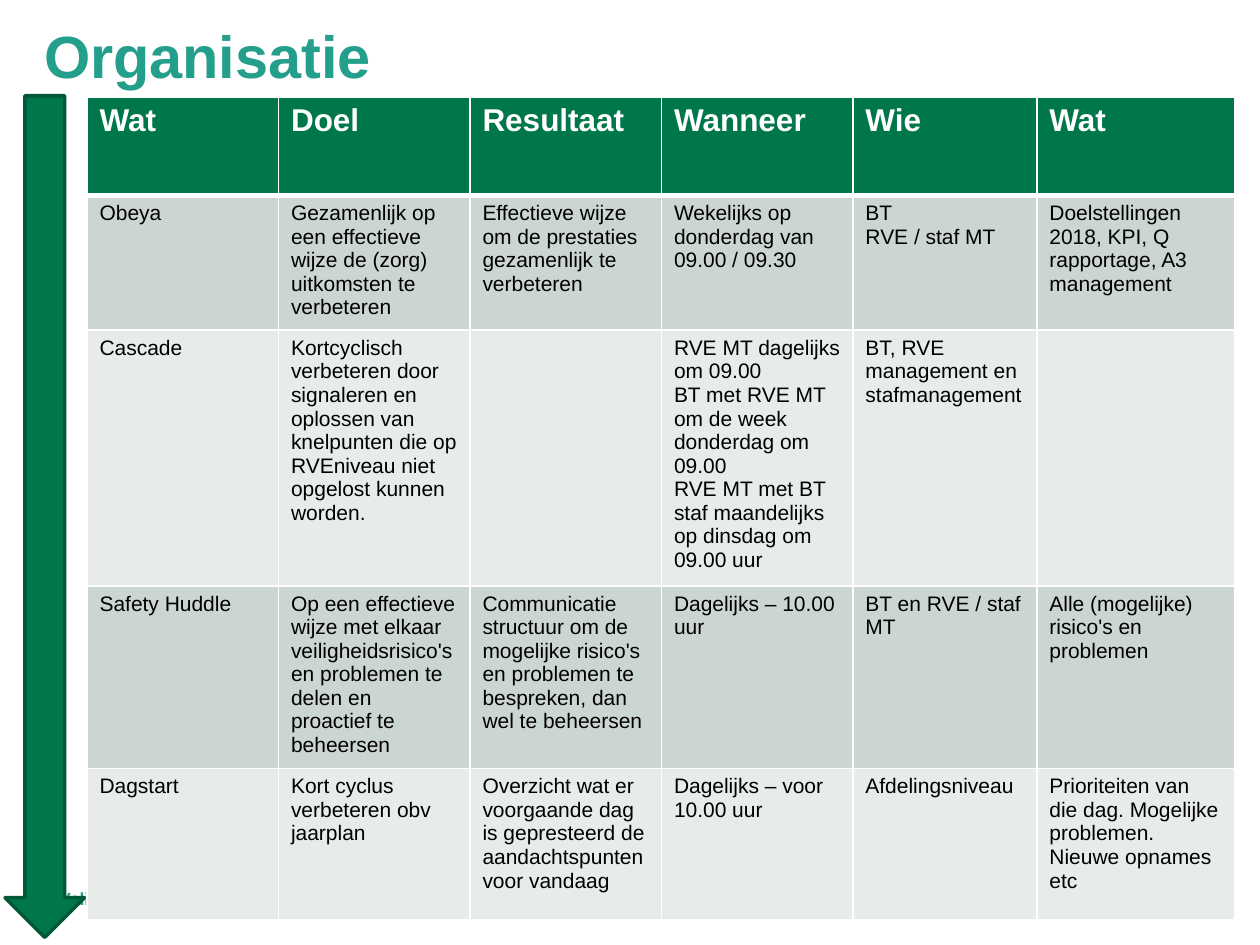
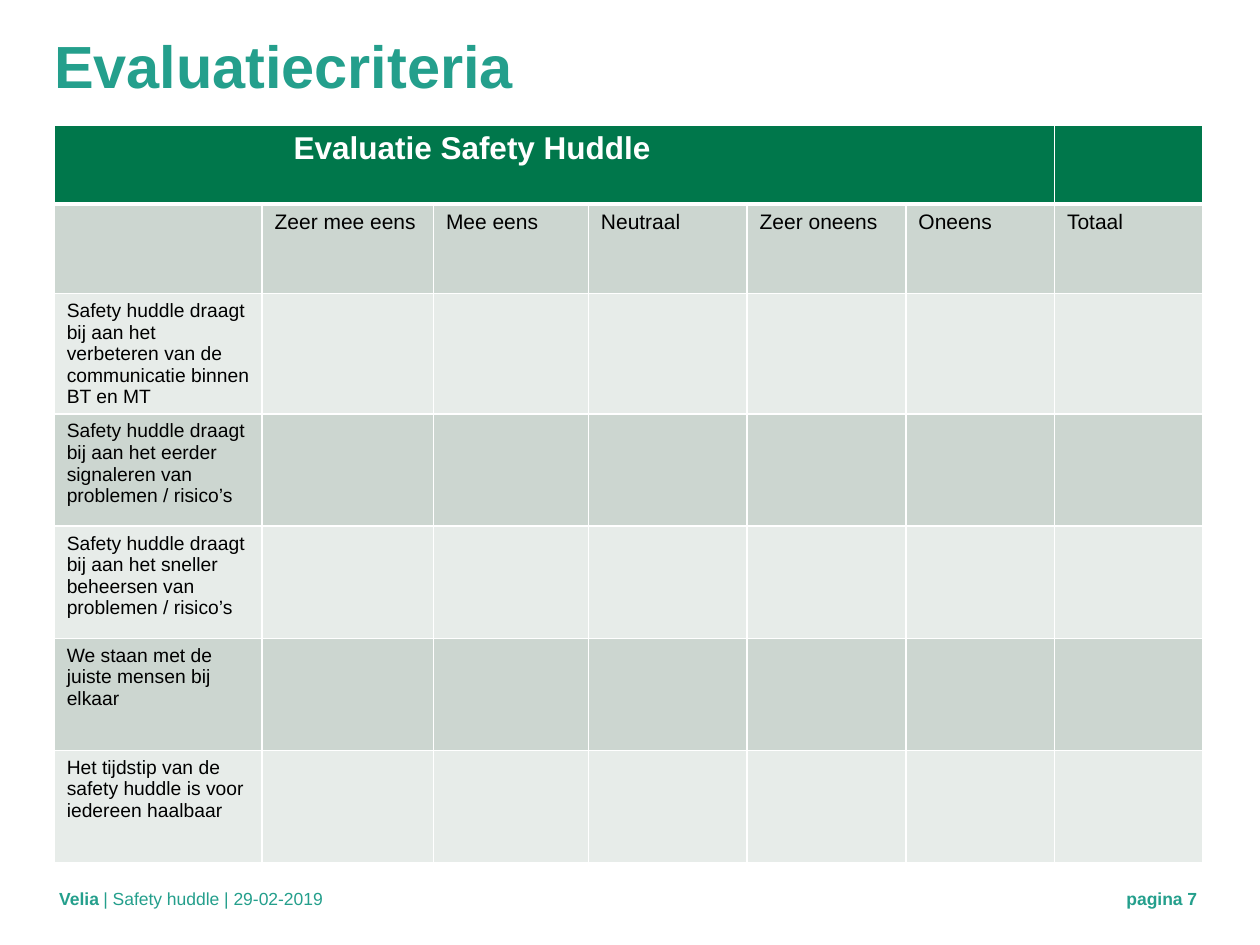
from pptx import Presentation
from pptx.dml.color import RGBColor
from pptx.enum.shapes import MSO_SHAPE
from pptx.enum.text import MSO_ANCHOR
from pptx.oxml.ns import qn
from pptx.util import Inches, Pt
from lxml.etree import SubElement

TEAL, GREEN, DARK_GREEN = "249F8C", "00774B", "005837"
BANDS = ("CCD6D0", "E7ECE9")
WHITE, BLACK = "FFFFFF", "000000"

TITLE = {"size": Pt(34), "bold": True, "color": TEAL}
FOOTER = {"size": Pt(10), "bold": False, "color": TEAL}
FOOTER_BOLD = {**FOOTER, "bold": True}
HEADER = {"size": Pt(18), "bold": True, "color": WHITE}
BODY = {"size": Pt(12), "bold": False, "color": BLACK}
SMALL = {**BODY, "size": Pt(11)}
CELL_LINE_SPACING = 1.12


def rgb(value):
    return RGBColor.from_string(value)


def format_paragraph(paragraph, style, spacing):
    paragraph.line_spacing = Pt(spacing)
    for run in paragraph.runs:
        font = run.font
        font.name = "Arial"
        for name, value in style.items():
            if name == "color":
                font.color.rgb = rgb(value)
            else:
                setattr(font, name, value)


class Deck:
    def __init__(self):
        self.presentation = Presentation()
        self.presentation.slide_width = Inches(10)
        self.presentation.slide_height = Inches(7.5)
        self.slide = None

    def new_slide(self):
        self.slide = self.presentation.slides.add_slide(self.presentation.slide_layouts[6])
        self.footer("Velia", 0.47, 0.35, FOOTER_BOLD, wrap=False)

    def text(self, text, left, top, width, height, style, spacing, wrap=True):
        box = self.slide.shapes.add_textbox(*map(Inches, (left, top, width, height)))
        frame = box.text_frame
        frame.text = text
        settings = {"word_wrap": wrap, "vertical_anchor": MSO_ANCHOR.MIDDLE,
                    "margin_left": 0, "margin_top": 0,
                    "margin_right": 0, "margin_bottom": 0}
        for name, value in settings.items():
            setattr(frame, name, value)
        format_paragraph(frame.paragraphs[0], style, spacing)

    def title(self, text, left, top):
        self.text(text, left, top, 9.06, 0.59, TITLE, 42.5)

    def footer(self, text, left, width, style, wrap=True):
        self.text(text, left, 7.05, width, 0.17, style, 12, wrap)

    def down_arrow(self, left, top, width, height):
        shape = self.slide.shapes.add_shape(
            MSO_SHAPE.DOWN_ARROW, *map(Inches, (left, top, width, height)))
        shape.shadow.inherit = False
        shape.fill.solid()
        shape.fill.fore_color.rgb = rgb(GREEN)
        shape.line.color.rgb = rgb(DARK_GREEN)
        shape.line.width = Pt(2)

    def borders(self, cell, row):
        properties = cell._tc.get_or_add_tcPr()
        widths = {"lnL": 1, "lnR": 1, "lnT": 3 if row == 1 else 1, "lnB": 3 if row == 0 else 1}
        for side, width in widths.items():
            line = SubElement(properties, qn(f"a:{side}"), w=str(Pt(width)))
            fill = SubElement(line, qn("a:solidFill"))
            SubElement(fill, qn("a:srgbClr"), val=WHITE)

    def table(self, left, top, widths, heights, rows, styles):
        frame = self.slide.shapes.add_table(
            len(heights), len(widths), Inches(left), Inches(top),
            Inches(sum(widths)), Inches(sum(heights)))
        table = frame.table
        for column, width in zip(table.columns, widths):
            column.width = Inches(width)
        for row, height in zip(table.rows, heights):
            row.height = Inches(height)
        for row, style in enumerate(styles):
            # Fixed line spacing keeps the rows at their set heights
            spacing = style["size"].pt * CELL_LINE_SPACING
            for column in range(len(widths)):
                cell = table.cell(row, column)
                self.borders(cell, row)
                cell.fill.solid()
                cell.fill.fore_color.rgb = rgb(BANDS[(row - 1) % 2] if row else GREEN)
                # Short rows leave their remaining cells empty
                if column < len(rows[row]) and rows[row][column]:
                    cell.text_frame.text = rows[row][column]
                    for paragraph in cell.text_frame.paragraphs:
                        format_paragraph(paragraph, style, spacing)
        return table


def organisation_slide(deck):
    deck.new_slide()
    deck.title("Organisatie", 0.35, 0.13)
    deck.down_arrow(0.04, 0.76, 0.63, 6.68)
    rows = [
        ["Wat", "Doel", "Resultaat", "Wanneer", "Wie", "Wat"],
        ["Obeya",
         "Gezamenlijk op een effectieve wijze de (zorg) uitkomsten te verbeteren",
         "Effectieve wijze om de prestaties gezamenlijk te verbeteren",
         "Wekelijks op donderdag van 09.00 / 09.30",
         "BT\nRVE / staf MT",
         "Doelstellingen 2018, KPI, Q rapportage, A3 management"],
        ["Cascade",
         "Kortcyclisch verbeteren door signaleren en oplossen van knelpunten "
         "die op RVEniveau niet opgelost kunnen worden.",
         "",
         "RVE MT dagelijks om 09.00\n"
         "BT met RVE MT om de week donderdag om 09.00\n"
         "RVE MT met BT staf maandelijks op dinsdag om 09.00 uur",
         "BT, RVE management en stafmanagement"],
        ["Safety Huddle",
         "Op een effectieve wijze met elkaar veiligheidsrisico's en problemen "
         "te delen en proactief te beheersen",
         "Communicatie structuur om de mogelijke risico's en problemen "
         "te bespreken, dan wel te beheersen",
         "Dagelijks – 10.00 uur",
         "BT en RVE / staf MT",
         "Alle (mogelijke) risico's en problemen"],
        ["Dagstart",
         "Kort cyclus verbeteren obv jaarplan",
         "Overzicht wat er voorgaande dag is gepresteerd de aandachtspunten voor vandaag",
         "Dagelijks – voor 10.00 uur",
         "Afdelingsniveau",
         "Prioriteiten van die dag. Mogelijke problemen. Nieuwe opnames etc"],
    ]
    deck.table(0.69, 0.77, [1.52] * 4 + [1.46, 1.57], [0.78, 1.07, 2.03, 1.45, 1.2],
               rows, [HEADER] + [BODY] * 4)


def evaluation_slide(deck):
    deck.new_slide()
    deck.title("Evaluatiecriteria", 0.43, 0.21)
    deck.footer("| Safety huddle | 29-02-2019", 0.82, 5.91, FOOTER)
    deck.footer("pagina 7", 8.94, 0.98, FOOTER_BOLD)
    criteria = [
        "Safety huddle draagt bij aan het verbeteren van de communicatie binnen BT en MT",
        "Safety huddle draagt bij aan het eerder signaleren van problemen / risico’s",
        "Safety huddle draagt bij aan het sneller beheersen van problemen / risico’s",
        "We staan met de juiste mensen bij elkaar",
        "Het tijdstip van de safety huddle is voor iedereen haalbaar",
    ]
    answers = ["", "Zeer mee eens", "Mee eens", "Neutraal", "Zeer oneens", "Oneens", "Totaal"]
    rows = [["Evaluatie Safety Huddle"], answers] + [[criterion] for criterion in criteria]
    table = deck.table(0.43, 0.99, [1.65, 1.36, 1.23, 1.26, 1.26, 1.18, 1.18],
                       [0.63, 0.71, 0.95] + [0.89] * 4, rows,
                       [HEADER, BODY] + [SMALL] * len(criteria))
    # The heading spans all answer columns and is indented
    heading = table.cell(0, 0)
    heading.merge(table.cell(0, 5))
    paragraph = heading.text_frame.paragraphs[0]
    paragraph._p.get_or_add_pPr().set("marL", str(Inches(1.8)))


def main():
    deck = Deck()
    organisation_slide(deck)
    evaluation_slide(deck)
    deck.presentation.save("out.pptx")


if __name__ == "__main__":
    main()
